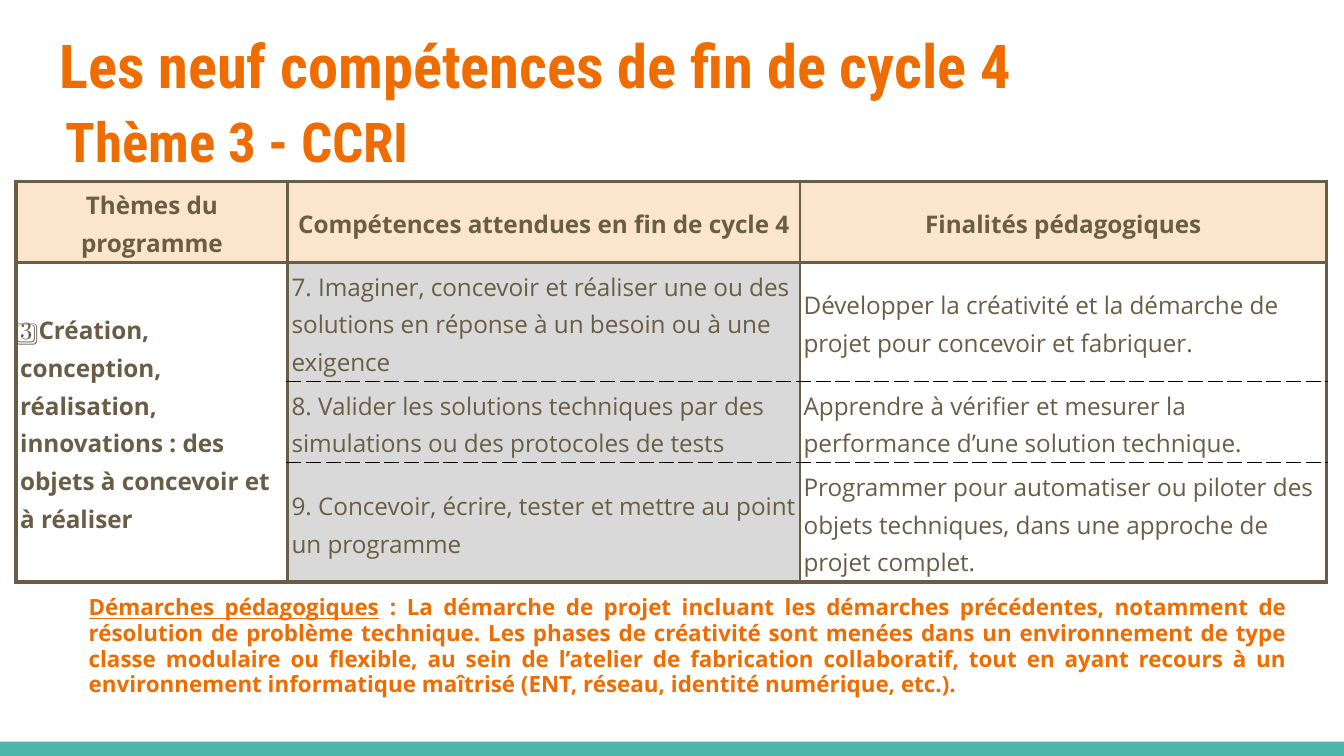
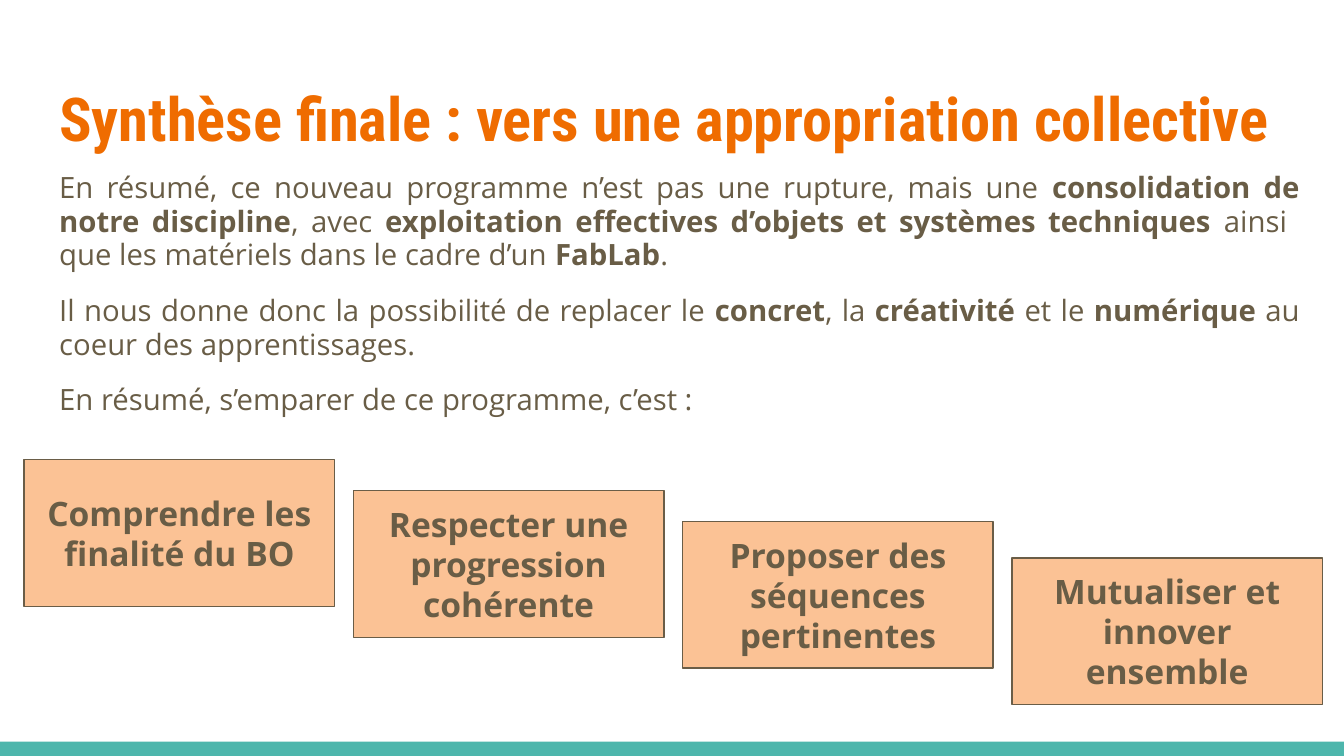
from dataclasses import dataclass, replace
from typing import NamedTuple

from lxml.etree import SubElement
from pptx import Presentation
from pptx.dml.color import RGBColor
from pptx.enum.shapes import MSO_SHAPE as Shape
from pptx.enum.text import MSO_ANCHOR as Anchor, MSO_AUTO_SIZE as AutoSize, PP_ALIGN as Align
from pptx.oxml.ns import qn
from pptx.util import Inches, Pt

COLORS = {
    "accent": "EF6C00",
    "text": "695D46",
    "band": "4DB6AC",
    "header": "FCE5CD",
    "skill": "D9D9D9",
    "box": "FBC295",
    "box_line": "6A5D47",
    "dash": "000000",
}
WIDTH, HEIGHT = Inches(10), Inches(5.625)


class Area(NamedTuple):
    """A rectangle in percent of the slide's width and height."""
    left: float
    top: float
    width: float
    height: float

    def emu(self) -> tuple[int, int, int, int]:
        """Return left, top, width and height as lengths."""
        return (across(self.left), down(self.top), across(self.width), down(self.height))


@dataclass(frozen=True)
class Style:
    """The look of a paragraph."""
    size: float
    color: str = "text"
    font: str = "Open Sans"
    bold: bool = False
    align: Align = Align.LEFT
    spacing: float = 1.0


class Border(NamedTuple):
    """The line on one side of a cell."""
    color: str
    width: float
    dash: str = "solid"


class Step(NamedTuple):
    """A box of the closing staircase."""
    text: str
    top: float


TITLE = Style(32.4, "accent", "Roboto Condensed", True)
SUBTITLE = replace(TITLE, size=29.4)
CELL = Style(13, spacing=1.15)
HEADER = replace(CELL, bold=True, align=Align.CENTER)
THEME = replace(CELL, bold=True)
APPROACH = Style(12, "accent", bold=True, align=Align.JUSTIFY, spacing=0.95)
SUMMARY = Style(15.7, align=Align.JUSTIFY, spacing=0.95)
BOX = Style(18, bold=True, align=Align.CENTER)

OUTER = Border("text", 2.05)
INNER = Border("text", 1.36)
DASHED = Border("dash", 0.75, "dash")

COLUMNS = (20.2, 38.1, 39.2)
ROWS = (10.72, 15.78, 10.72, 15.78)
SKILLS = [
    ["Thèmes du programme", "Compétences attendues en fin de cycle 4", "Finalités pédagogiques"],
    ["3️⃣ Création, conception, réalisation, innovations : des objets à concevoir et à réaliser",
     "7. Imaginer, concevoir et réaliser une ou des solutions en réponse à un besoin ou à une exigence",
     "Développer la créativité et la démarche de projet pour concevoir et fabriquer."],
    ["", "8. Valider les solutions techniques par des simulations ou des protocoles de tests",
     "Apprendre à vérifier et mesurer la performance d’une solution technique."],
    ["", "9. Concevoir, écrire, tester et mettre au point un programme",
     "Programmer pour automatiser ou piloter des objets techniques, dans une approche de projet complet."],
]
APPROACH_TEXT = (
    "*Démarches pédagogiques* : La démarche de projet incluant les démarches précédentes, "
    "notamment de résolution de problème technique. Les phases de créativité sont menées dans un "
    "environnement de type classe modulaire ou flexible, au sein de l’atelier de fabrication "
    "collaboratif, tout en ayant recours à un environnement informatique maîtrisé "
    "(ENT, réseau, identité numérique, etc.)."
)
SUMMARY_TEXTS = [
    "En résumé, ce nouveau programme n’est pas une rupture, mais une *consolidation de notre "
    "discipline*, avec *exploitation effectives d’objets et systèmes techniques* ainsi  que les "
    "matériels dans le cadre d’un *FabLab*.",
    "Il nous donne donc la possibilité de replacer le *concret*, la *créativité* et le *numérique* "
    "au coeur des apprentissages.",
    "En résumé, s’emparer de ce programme, c’est :",
]
STEPS = [
    Step("Comprendre les finalité du BO", 60.8),
    Step("Respecter une progression cohérente", 64.9),
    Step("Proposer des séquences pertinentes", 69),
    Step("Mutualiser et innover ensemble", 73.8),
]


def across(share: float) -> int:
    """Turn a percentage of the slide's width into a length."""
    return int(WIDTH * share / 100)


def down(share: float) -> int:
    """Turn a percentage of the slide's height into a length."""
    return int(HEIGHT * share / 100)


def rgb(name: str) -> RGBColor:
    """Look up a named colour."""
    return RGBColor.from_string(COLORS[name])


def format_paragraph(p, style: Style) -> None:
    """Apply a style to a paragraph and its runs."""
    p.alignment, p.line_spacing = style.align, style.spacing
    p.space_before = p.space_after = Pt(0)
    for r in p.runs:
        r.font.name, r.font.size, r.font.bold = style.font, Pt(style.size), style.bold
        r.font.color.rgb = rgb(style.color)


def set_text(sp, text: str, style: Style, anchor: Anchor = Anchor.MIDDLE) -> None:
    """Write one styled paragraph in a shape with even margins."""
    tf = sp.text_frame
    tf.text = text
    frame_text(tf, anchor)
    format_paragraph(tf.paragraphs[0], style)


def frame_text(tf, anchor: Anchor) -> None:
    """Set the wrapping, anchor and margins of a text frame."""
    tf.word_wrap, tf.auto_size, tf.vertical_anchor = True, AutoSize.NONE, anchor
    tf.margin_left = tf.margin_right = tf.margin_top = tf.margin_bottom = Inches(0.1)


def place(sp, area: Area) -> None:
    """Move a shape to an area."""
    sp.left, sp.top, sp.width, sp.height = area.emu()


def add_rect(s, area: Area, fill: str, line: str | None = None):
    """Draw a flat rectangle."""
    sp = s.shapes.add_shape(Shape.RECTANGLE, *area.emu())
    sp.shadow.inherit = False
    sp.fill.solid()
    sp.fill.fore_color.rgb = rgb(fill)
    if line:
        sp.line.color.rgb, sp.line.width = rgb(line), Pt(0.75)
    else:
        sp.line.fill.background()
    return sp


def add_page(prs, title: str, top: float):
    """Add a slide with the shared band and title."""
    s = prs.slides.add_slide(prs.slide_layouts[1])
    add_rect(s, Area(0, 98.1, 100, 1.9), "band")
    place(s.shapes.title, Area(3.4, top, 93.2, 13.7))
    set_text(s.shapes.title, title, TITLE)
    return s


def fill_body(s, area: Area, texts: list[str], style: Style, emphasis: str, indent: float = 0) -> None:
    """Write paragraphs in the body, with the starred parts emphasised."""
    sp = s.placeholders[1]
    place(sp, area)
    tf = sp.text_frame
    frame_text(tf, Anchor.TOP)
    for i, text in enumerate(texts):
        p = tf.add_paragraph() if i else tf.paragraphs[0]
        for part in text.split("*"):
            p.add_run().text = part
        format_paragraph(p, style)
        p.space_before = Pt(12 if i else 0)
        for r in p.runs[1::2]:
            setattr(r.font, emphasis, True)
        for r in [r for r in p.runs if not r.text]:
            r._r.getparent().remove(r._r)
        pPr = p._p.get_or_add_pPr()
        pPr.set("marL", str(Inches(indent)))
        pPr.set("indent", "0")
        SubElement(pPr, qn("a:buNone"))


def set_borders(cell, sides: dict[str, Border]) -> None:
    """Draw the four borders of a cell."""
    tcPr = cell._tc.get_or_add_tcPr()
    for side in "LRTB":
        border = sides[side]
        ln = SubElement(tcPr, qn(f"a:ln{side}"), w=str(Pt(border.width)))
        fill = SubElement(ln, qn("a:solidFill"))
        SubElement(fill, qn("a:srgbClr"), val=COLORS[border.color])
        SubElement(ln, qn("a:prstDash"), val=border.dash)


def add_skills_table(s) -> None:
    """Draw the table of themes, skills and aims."""
    area = Area(1.2, 24, sum(COLUMNS), sum(ROWS))
    table = s.shapes.add_table(len(ROWS), len(COLUMNS), *area.emu()).table
    table.first_row = table.horz_banding = False
    for column, share in zip(table.columns, COLUMNS):
        column.width = across(share)
    for row, share in zip(table.rows, ROWS):
        row.height = down(share)
    table.cell(1, 0).merge(table.cell(3, 0))
    levels = (OUTER, INNER, DASHED, DASHED, OUTER)
    for i, texts in enumerate(SKILLS):
        for j, text in enumerate(texts):
            cell = table.cell(i, j)
            if cell.is_spanned:
                continue
            last = i + cell.span_height if cell.is_merge_origin else i + 1
            cell.text = text
            cell.vertical_anchor = Anchor.MIDDLE
            cell.margin_left = cell.margin_right = Inches(0.03)
            cell.margin_top = cell.margin_bottom = Inches(0.02)
            style = HEADER if i == 0 else THEME if j == 0 else CELL
            format_paragraph(cell.text_frame.paragraphs[0], style)
            set_borders(cell, {"L": INNER if j else OUTER, "R": OUTER if j == 2 else INNER,
                               "T": levels[i], "B": levels[last]})
            fill = "header" if i == 0 else "skill" if j == 1 else None
            if fill:
                cell.fill.solid()
                cell.fill.fore_color.rgb = rgb(fill)
            else:
                cell.fill.background()


def build_skills(prs) -> None:
    """Build the slide on the skills of theme 3."""
    s = add_page(prs, "Les neuf compétences de fin de cycle 4", 1.6)
    add_skills_table(s)
    subtitle = s.shapes.add_textbox(*Area(3.9, 11.7, 85.3, 13.7).emu())
    set_text(subtitle, "Thème 3 - CCRI", SUBTITLE)
    fill_body(s, Area(4.3, 77, 92.5, 18.1), [APPROACH_TEXT], APPROACH, "underline", 0.13)


def build_summary(prs) -> None:
    """Build the closing slide with its staircase of boxes."""
    s = add_page(prs, "Synthèse finale : vers une appropriation collective", 8.7)
    fill_body(s, Area(3.4, 21, 94.3, 37.7), SUMMARY_TEXTS, SUMMARY, "bold")
    for i, step in enumerate(STEPS):
        sp = add_rect(s, Area(1.8 + 24.5 * i, step.top, 23.1, 19.4), "box", "box_line")
        set_text(sp, step.text, BOX)


def main() -> None:
    """Build and save the presentation."""
    prs = Presentation()
    prs.slide_width, prs.slide_height = WIDTH, HEIGHT
    build_skills(prs)
    build_summary(prs)
    prs.save("out.pptx")


if __name__ == "__main__":
    main()
